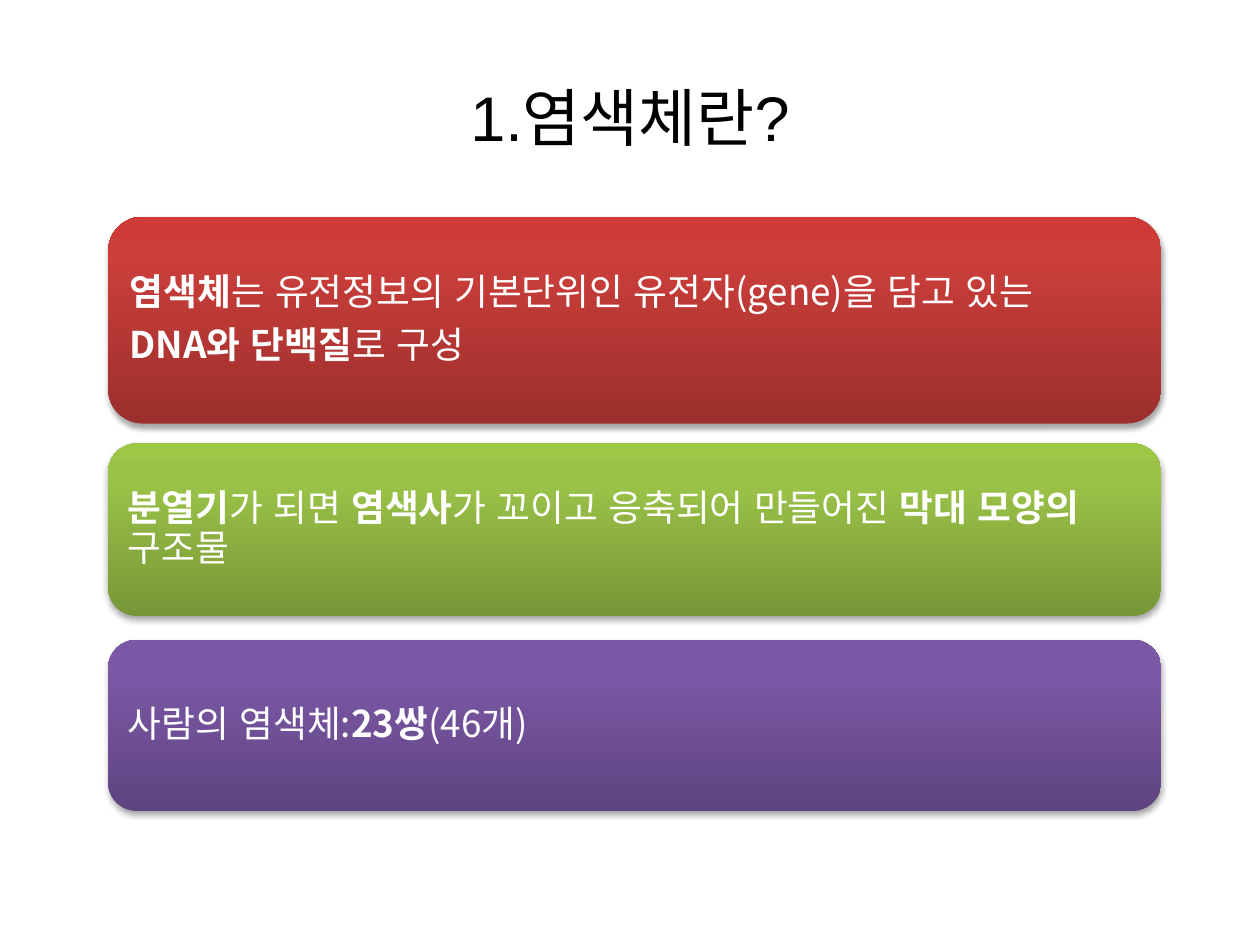
from copy import deepcopy
from lxml.etree import SubElement
from pptx import Presentation
from pptx.dml.color import RGBColor
from pptx.enum.lang import MSO_LANGUAGE_ID as LANGUAGE
from pptx.enum.shapes import MSO_SHAPE as SHAPE
from pptx.enum.text import MSO_ANCHOR as ANCHOR, PP_ALIGN as ALIGN
from pptx.oxml.ns import qn
from pptx.util import Cm, Pt


def color(value):
    return RGBColor.from_string(value)


def format_run(run, size, font_name, value):
    run.font.size = Pt(size)
    run.font.name = font_name
    run.font.color.rgb = color(value)
    run.font.language_id = LANGUAGE.KOREAN


PANELS = [
    (4.37, 4.17, ["9C2F2D", "CB3E3A", "CE3B37"], [
        [("염색체", True), ("는 유전정보의 기본단위인 유전자(gene)을 담고 있는", False)],
        [("DNA와 단백질", True), ("로 구성", False)],
    ]),
    (8.94, 3.48, ["779737", "9BC348", "9DC746"], [
        [("분열기", True), ("가 되면 ", False), ("염색사", True),
         ("가 꼬이고 응축되어 만들어진 ", False), ("막대 모양의 ", True), ("구조물", False)],
    ]),
    (12.9, 3.45, ["5F4480", "7B58A6", "7C57A8"], [
        [("사람의 염색체:", False), ("23쌍", True), ("(46개)", False)],
    ]),
]

presentation = Presentation()
presentation.slide_width = Cm(25.4)
presentation.slide_height = Cm(19.05)
slide = presentation.slides.add_slide(presentation.slide_layouts[6])

title = slide.shapes.add_textbox(Cm(1.27), Cm(0.76), Cm(22.86), Cm(3.18))
title.text_frame.word_wrap = True
title.text_frame.vertical_anchor = ANCHOR.MIDDLE
title.text_frame.text = "1.염색체란?"
title_paragraph = title.text_frame.paragraphs[0]
title_paragraph.alignment = ALIGN.CENTER
format_run(title_paragraph.runs[0], 36, "Arial", "000000")

for top, height, gradient, lines in PANELS:
    panel = slide.shapes.add_shape(SHAPE.ROUNDED_RECTANGLE, Cm(2.18), Cm(top), Cm(21.23), Cm(height))
    panel.line.fill.background()
    panel.fill.gradient()
    panel.fill.gradient_angle = 90
    properties = panel.element.spPr
    stop_list = properties.find(qn("a:gradFill")).find(qn("a:gsLst"))
    stop_list.append(deepcopy(stop_list[-1]))
    for stop, position, value in zip(panel.fill.gradient_stops, (0, 0.8, 1), gradient):
        stop.position = position
        stop.color.rgb = color(value)

    panel.shadow.inherit = False
    shadow = SubElement(properties.find(qn("a:effectLst")), qn("a:outerShdw"),
                        blurRad=str(Pt(3.1)), dist=str(Pt(1.8)), dir="5400000", rotWithShape="0")
    shadow_color = SubElement(shadow, qn("a:srgbClr"), val="000000")
    SubElement(shadow_color, qn("a:alpha"), val="35000")

    text_frame = panel.text_frame
    text_frame.word_wrap = True
    text_frame.vertical_anchor = ANCHOR.MIDDLE
    text_frame.margin_left = text_frame.margin_right = Cm(0.23)
    text_frame.margin_top = text_frame.margin_bottom = Cm(0.23)
    for index, line in enumerate(lines):
        paragraph = text_frame.add_paragraph() if index else text_frame.paragraphs[0]
        paragraph.alignment = ALIGN.LEFT
        paragraph.line_spacing = 0.9
        paragraph.space_after = Pt(7.35)
        for words, bold in line:
            run = paragraph.add_run()
            run.text = words
            format_run(run, 21, "Noto Sans CJK KR", "FFFFFF")
            run.font.bold = bold
            SubElement(run.font._element, qn("a:ea"), typeface="Noto Sans CJK KR")

presentation.save("out.pptx")
